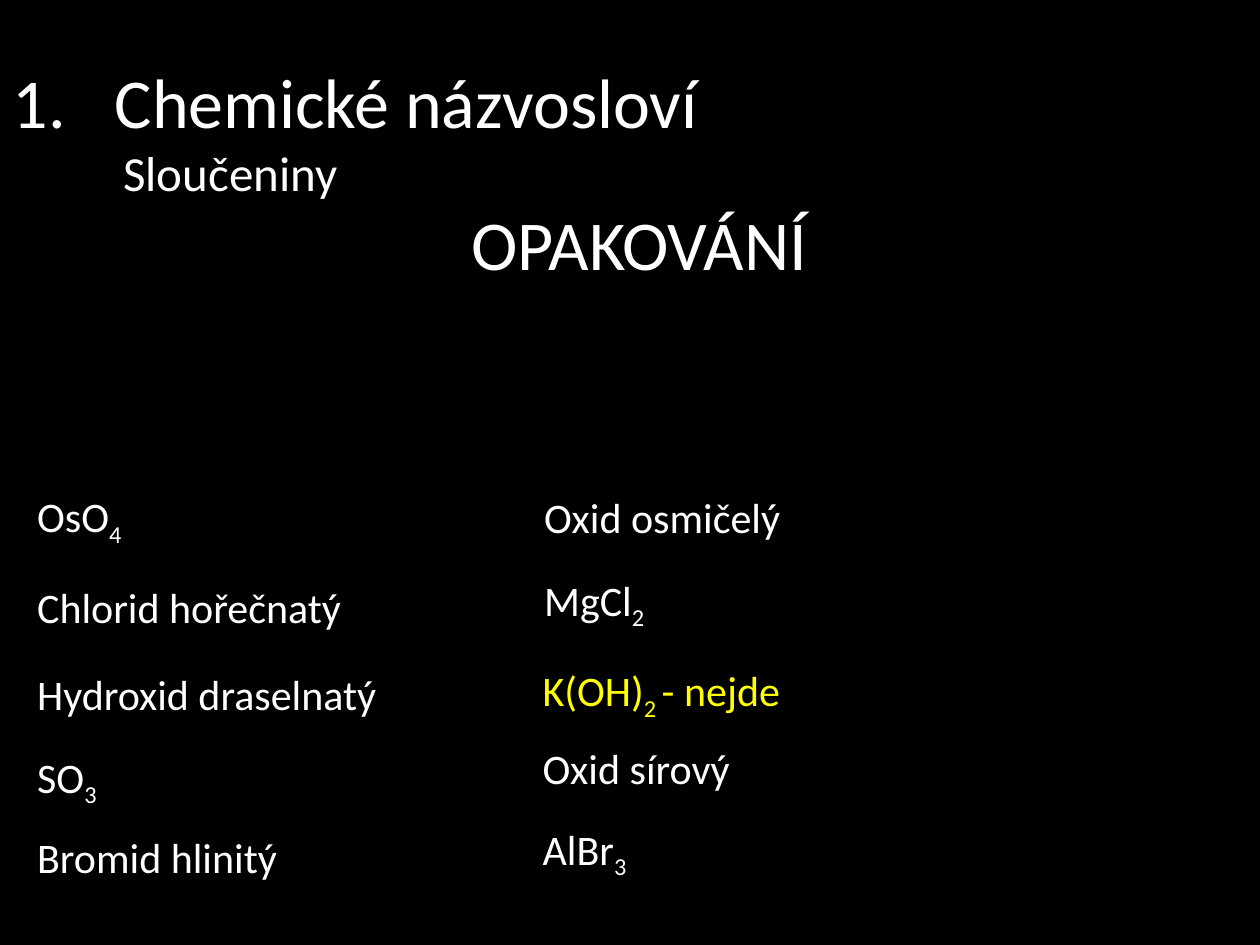
import dataclasses

import pptx
import pptx.dml.color
import pptx.enum.shapes
import pptx.enum.text
import pptx.oxml.ns
import pptx.util
from lxml import etree
from pptx.util import Cm


@dataclasses.dataclass(frozen=True)
class Theme:
    font: str = "Calibri"
    background: str = "000000"
    text: str = "FFFFFF"
    warning: str = "FFFF00"
    heading_size: int = 40
    subheading_size: int = 28
    item_size: int = 24


THEME = Theme()
ROW_HEIGHT = 1.75
QUESTION_LEFT, QUESTION_WIDTH = 0.5, 9.42
ANSWER_WIDTH = 5.33

# Text between bars is subscript; tops are in centimetres
QUESTIONS = [
    ("OsO|4", 9.6),
    ("Chlorid hořečnatý", 11.35),
    ("Hydroxid draselnatý", 13.1),
    ("SO|3", 14.85),
    ("Bromid hlinitý", 16.4),
]
ANSWERS = [
    ("Oxid osmičelý", 10.72, 9.55, {}),
    ("MgCl|2", 10.72, 11.28, {}),
    ("K(OH)|2 |- nejde", 10.69, 13.1, {"color": THEME.warning, "width": 5.61}),
    ("Oxid sírový", 10.69, 14.6, {}),
    ("AlBr|3", 10.69, 16.3, {}),
]


def rgb(value):
    return pptx.dml.color.RGBColor.from_string(value)


def write_text(paragraph, text, *, size, color=THEME.text, left=0, hanging=0):
    """Write text into a paragraph, with every second part as subscript."""
    paragraph.alignment = pptx.enum.text.PP_ALIGN.LEFT
    properties = paragraph._p.get_or_add_pPr()
    properties.set("marL", str(Cm(left)))
    properties.set("indent", str(-Cm(hanging)))
    for index, part in enumerate(text.split("|")):
        run = paragraph.add_run()
        run.text = part
        run.font.name = THEME.font
        run.font.size = pptx.util.Pt(size)
        run.font.color.rgb = rgb(color)
        if index % 2:
            run._r.get_or_add_rPr().set("baseline", "-25000")


def number_paragraph(paragraph):
    properties = paragraph._p.get_or_add_pPr()
    numbering = etree.SubElement(properties, pptx.oxml.ns.qn("a:buAutoNum"))
    numbering.set("type", "arabicPeriod")


def add_heading(slide):
    heading = slide.shapes.title
    heading.left, heading.top = Cm(0), Cm(0)
    heading.width, heading.height = Cm(25.4), Cm(8.71)
    heading.fill.solid()
    heading.fill.fore_color.rgb = rgb(THEME.background)
    heading.line.color.rgb = rgb(THEME.background)
    heading.line.width = pptx.util.Pt(1)

    frame = heading.text_frame
    frame.auto_size = pptx.enum.text.MSO_AUTO_SIZE.NONE
    frame.vertical_anchor = pptx.enum.text.MSO_ANCHOR.TOP
    frame.margin_top = Cm(1.17)
    topic = frame.paragraphs[0]
    write_text(topic, "Chemické názvosloví", size=THEME.heading_size,
               left=2.06, hanging=2.06)
    number_paragraph(topic)
    write_text(frame.add_paragraph(), "Sloučeniny",
               size=THEME.subheading_size, left=2.23)
    write_text(frame.add_paragraph(), "OPAKOVÁNÍ",
               size=THEME.heading_size, left=9.25)


def add_item(slide, text, left, top, width, color=THEME.text):
    item = slide.shapes.add_shape(
        pptx.enum.shapes.MSO_SHAPE.RECTANGLE,
        Cm(left), Cm(top), Cm(width), Cm(ROW_HEIGHT))
    item.shadow.inherit = False
    item.fill.solid()
    item.fill.fore_color.rgb = rgb(THEME.background)
    item.line.fill.background()
    frame = item.text_frame
    frame.word_wrap = True
    frame.vertical_anchor = pptx.enum.text.MSO_ANCHOR.MIDDLE
    write_text(frame.paragraphs[0], text, size=THEME.item_size, color=color)


def main():
    presentation = pptx.Presentation()
    presentation.slide_width, presentation.slide_height = Cm(25.4), Cm(19.05)
    slide = presentation.slides.add_slide(
        presentation.slide_layouts.get_by_name("Title Only"))
    slide.background.fill.solid()
    slide.background.fill.fore_color.rgb = rgb(THEME.background)

    # Heading block
    add_heading(slide)

    # Compounds to name and their solutions
    for question, top in QUESTIONS:
        add_item(slide, question, QUESTION_LEFT, top, QUESTION_WIDTH)
    for answer, left, top, changes in ANSWERS:
        add_item(slide, answer, left, top, **{"width": ANSWER_WIDTH, **changes})

    presentation.save("out.pptx")


if __name__ == "__main__":
    main()
